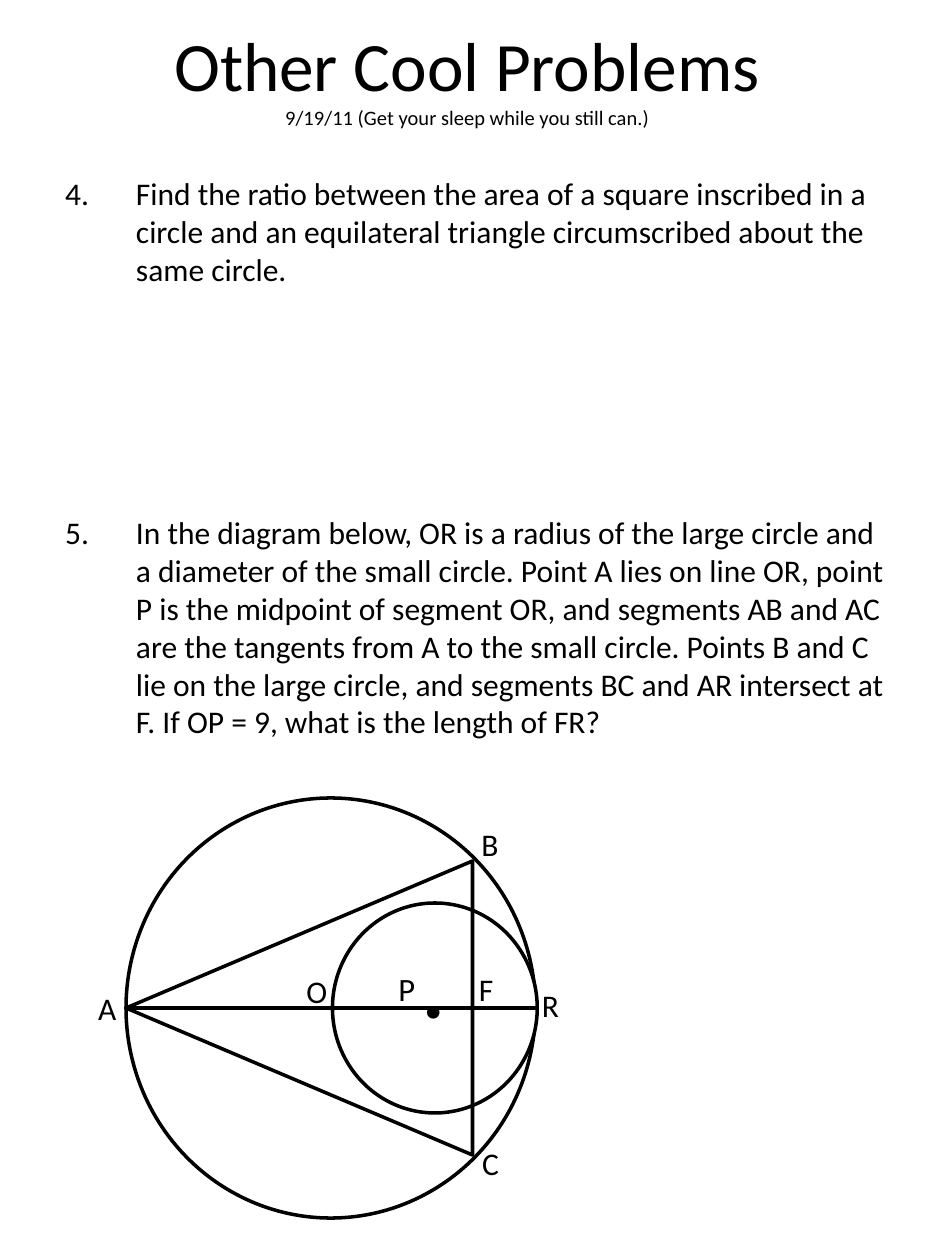
from pptx import Presentation
from pptx.dml.color import RGBColor
from pptx.enum.shapes import MSO_CONNECTOR, MSO_SHAPE
from pptx.enum.text import MSO_ANCHOR, MSO_AUTO_SIZE, PP_ALIGN
from pptx.oxml.ns import qn
from pptx.util import Pt
from lxml.etree import SubElement

HUES = {"ink": "000000", "paper": "FFFFFF"}
HEADS = [("Other Cool Problems", 39.6),
         ("9/19/11 (Get your sleep while you still can.)", 11.7)]
TASKS = [
    ("Find the ratio between the area of a square inscribed in a circle and an "
     "equilateral triangle circumscribed about the same circle.", 0),
    ("In the diagram below, OR is a radius of the large circle and a diameter of "
     "the small circle. Point A lies on line OR, point P is the midpoint of "
     "segment OR, and segments AB and AC are the tangents from A to the small "
     "circle. Points B and C lie on the large circle, and segments BC and AR "
     "intersect at F. If OP = 9, what is the length of FR?", 129),
]
MARKS = {"A": (49, 561.5), "O": (168, 552), "F": (266.5, 551),
         "R": (302.5, 560), "C": (268.5, 650), "B": (268, 468)}


class Sheet:
    """Draws styled elements on one slide."""

    def __init__(self, slide):
        self.slide = slide
        self.font = {"name": "Calibri", "size": Pt(18)}
        self.width = Pt(2)

    def hue(self, name):
        return RGBColor.from_string(HUES[name])

    def place(self, shape, *box):
        for side, value in zip(("left", "top", "width", "height"), box):
            setattr(shape, side, Pt(value))

    def text(self, par, words, **extra):
        run = par.add_run()
        run.text = words
        for key, value in {**self.font, **extra}.items():
            setattr(run.font, key, value)
        run.font.color.rgb = self.hue("ink")
        return run

    def title(self, lines, *box):
        shape = self.slide.shapes.title
        self.place(shape, *box)
        frame = shape.text_frame
        frame.auto_size = MSO_AUTO_SIZE.NONE
        frame.vertical_anchor = MSO_ANCHOR.MIDDLE
        for i, (words, size) in enumerate(lines):
            par = frame.add_paragraph() if i else frame.paragraphs[0]
            par.alignment = PP_ALIGN.CENTER
            self.text(par, words, size=Pt(size))

    def list(self, items, start, *box):
        shape = self.slide.placeholders[1]
        self.place(shape, *box)
        frame = shape.text_frame
        frame.auto_size = MSO_AUTO_SIZE.NONE
        for i, (words, gap) in enumerate(items):
            par = frame.add_paragraph() if i else frame.paragraphs[0]
            par.space_before = Pt(gap)
            props = par._p.get_or_add_pPr()
            props.set("marL", str(Pt(40.5)))
            props.set("indent", str(-Pt(40.5)))
            SubElement(props, qn("a:buFont"), typeface="+mj-lt")
            SubElement(props, qn("a:buAutoNum"), type="arabicPeriod", startAt=str(start))
            self.text(par, words)

    def stroke(self, shape):
        shape.line.color.rgb = self.hue("ink")
        shape.line.width = self.width

    def shape(self, kind, *box, fill=None, turn=0):
        shape = self.slide.shapes.add_shape(kind, *map(Pt, box))
        shape.shadow.inherit = False
        shape.rotation = turn
        if fill:
            shape.fill.solid()
            shape.fill.fore_color.rgb = self.hue(fill)
        else:
            shape.fill.background()
        self.stroke(shape)

    def line(self, *ends):
        line = self.slide.shapes.add_connector(MSO_CONNECTOR.STRAIGHT, *map(Pt, ends))
        self.stroke(line)
        SubElement(line._element.spPr, qn("a:effectLst"))

    def label(self, *box):
        frame = self.slide.shapes.add_textbox(*map(Pt, box)).text_frame
        frame.word_wrap = True
        frame.auto_size = MSO_AUTO_SIZE.SHAPE_TO_FIT_TEXT
        return frame.paragraphs[0]


def main():
    deck = Presentation()
    deck.slide_width, deck.slide_height = Pt(540), Pt(720)
    sheet = Sheet(deck.slides.add_slide(deck.slide_layouts[1]))
    sheet.title(HEADS, 12, 21.6, 510, 43.2)
    sheet.list(TASKS, 4, 30, 96, 486, 594)

    sheet.shape(MSO_SHAPE.OVAL, 72, 456, 234, 240, fill="paper")
    sheet.shape(MSO_SHAPE.OVAL, 190, 516, 117, 120, fill="paper")
    sheet.shape(MSO_SHAPE.ISOSCELES_TRIANGLE, 87, 477, 168, 198, turn=270)
    sheet.line(72, 576, 307, 576)

    for name, (left, top) in MARKS.items():
        sheet.text(sheet.label(left, top, 30, 29), name)
    point = sheet.label(220.5, 530.5, 176, 65.5)
    high = sheet.text(point, "P", size=Pt(32))
    high._r.get_or_add_rPr().set("baseline", "30000")
    sheet.text(point, " ")
    sheet.text(point, ".", size=Pt(48), bold=True)
    deck.save("out.pptx")


if __name__ == "__main__":
    main()
